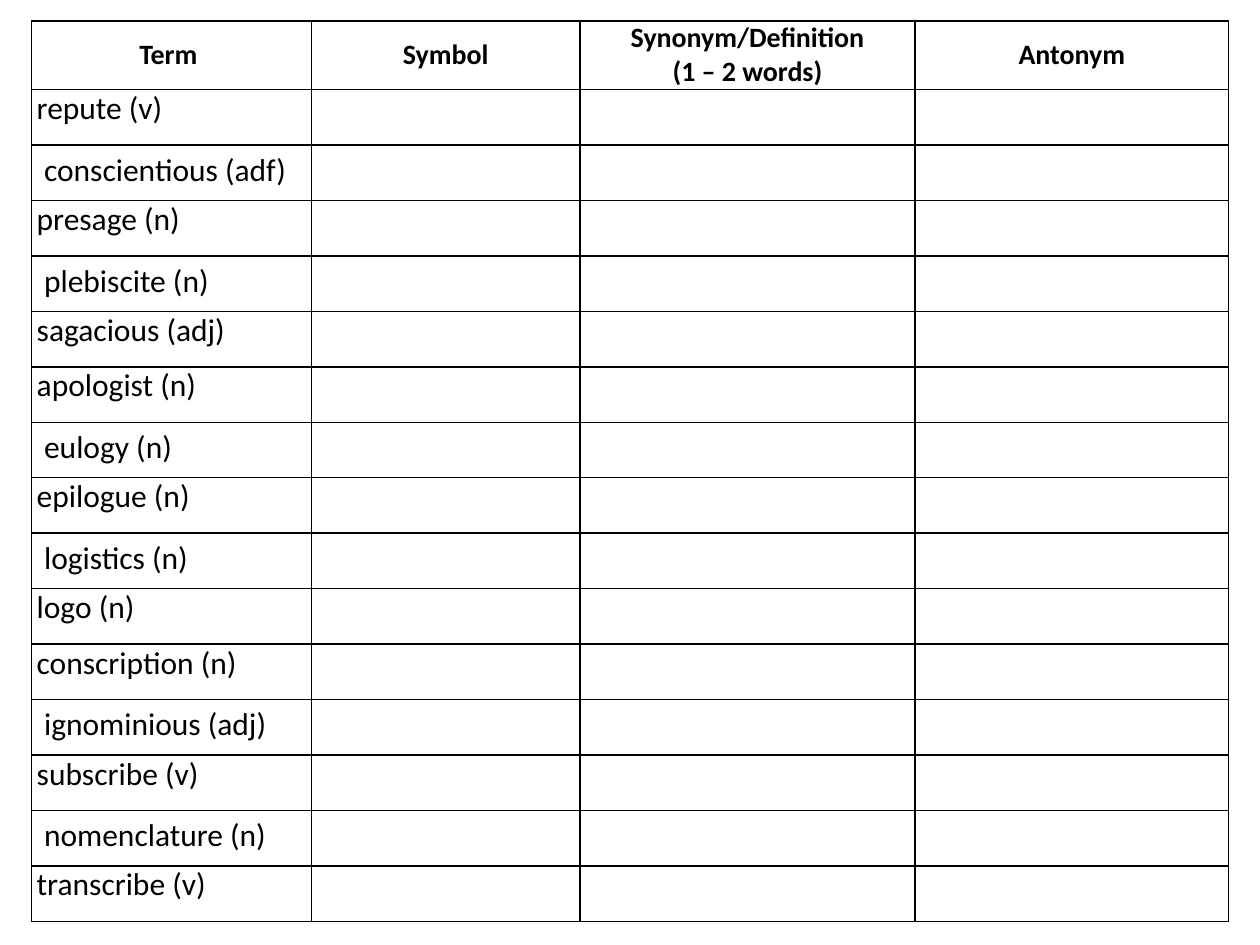
from lxml import etree
from pptx import Presentation
from pptx.dml.color import RGBColor
from pptx.enum.text import MSO_ANCHOR, PP_ALIGN
from pptx.oxml.ns import qn
from pptx.util import Pt

CENTER = PP_ALIGN.CENTER
MIDDLE = MSO_ANCHOR.MIDDLE
BLACK = RGBColor(0, 0, 0)
FONT = "Calibri"

HEADERS = ["Term ", "Symbol", "Synonym/Definition\n(1 – 2 words)", "Antonym"]
NARROW, STANDARD = 3, 7.2
TERMS = [
    ("repute (v)", NARROW),
    ("conscientious (adf)", STANDARD),
    ("presage (n)", NARROW),
    ("plebiscite (n)", STANDARD),
    ("sagacious (adj)", NARROW),
    ("apologist (n)", NARROW),
    ("eulogy (n)", STANDARD),
    ("epilogue (n)", NARROW),
    ("logistics (n)", STANDARD),
    ("logo (n)", NARROW),
    ("conscription (n)", NARROW),
    ("ignominious (adj)", STANDARD),
    ("subscribe (v)", NARROW),
    ("nomenclature (n)", STANDARD),
    ("transcribe (v)", NARROW),
]
COLUMN_WIDTHS = [160, 153.4, 191.6, 179]
HEADER_HEIGHT, TERM_HEIGHT = 39.1, 31.7
LEFT, TOP = 18, 12


def add_borders(cell):
    properties = cell._tc.get_or_add_tcPr()
    for side in ("a:lnL", "a:lnR", "a:lnT", "a:lnB"):
        line = etree.SubElement(properties, qn(side), w=str(Pt(1)))
        fill = etree.SubElement(line, qn("a:solidFill"))
        etree.SubElement(fill, qn("a:srgbClr"), val=str(BLACK))


def write_cell(cell, text, size, side_margin, end_margin, bold=False, alignment=None):
    cell.text = text
    cell.margin_left = cell.margin_right = Pt(side_margin)
    cell.margin_top = cell.margin_bottom = Pt(end_margin)
    for paragraph in cell.text_frame.paragraphs:
        paragraph.alignment = alignment
        paragraph.font.name = FONT
        paragraph.font.size = Pt(size)
        paragraph.font.bold = bold
        paragraph.font.color.rgb = BLACK


presentation = Presentation()
presentation.slide_width, presentation.slide_height = Pt(720), Pt(540)
slide = presentation.slides.add_slide(presentation.slide_layouts[6])

table_height = HEADER_HEIGHT + TERM_HEIGHT * len(TERMS)
table = slide.shapes.add_table(
    len(TERMS) + 1, len(HEADERS),
    Pt(LEFT), Pt(TOP), Pt(sum(COLUMN_WIDTHS)), Pt(table_height),
).table
table.first_row = table.horz_banding = False

for column, width in zip(table.columns, COLUMN_WIDTHS):
    column.width = Pt(width)
for index, row in enumerate(table.rows):
    row.height = Pt(TERM_HEIGHT if index else HEADER_HEIGHT)
for cell in table.iter_cells():
    add_borders(cell)
    cell.fill.background()

for column, header in enumerate(HEADERS):
    cell = table.cell(0, column)
    write_cell(cell, header, 16, 5, 0, bold=True, alignment=CENTER)
    cell.vertical_anchor = MIDDLE
for row, (term, margin) in enumerate(TERMS, start=1):
    end_margin = 0 if margin == NARROW else 3.6
    write_cell(table.cell(row, 0), term, 18, margin, end_margin)

presentation.save("out.pptx")
